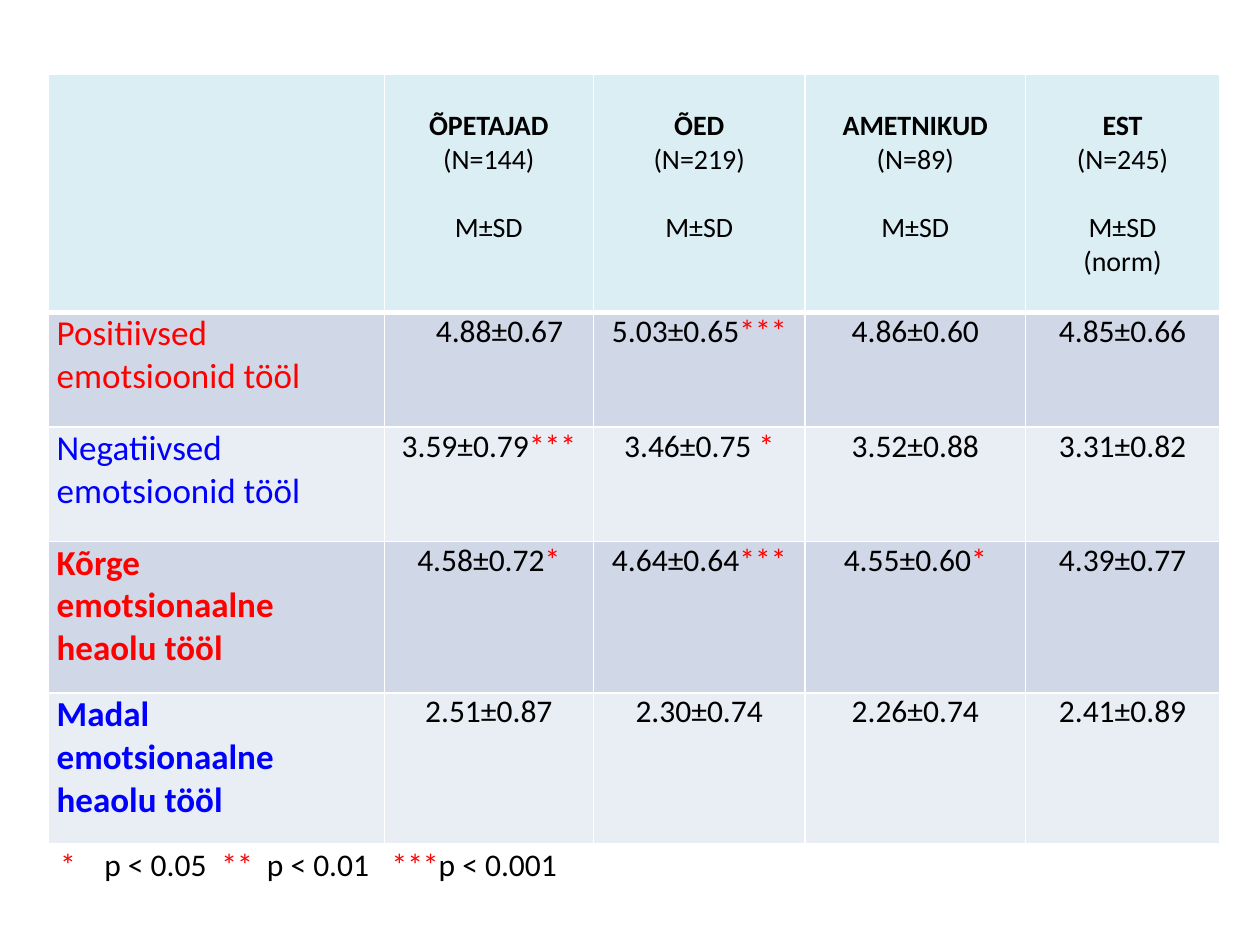
from lxml import etree
from pptx import Presentation
from pptx.dml.color import RGBColor
from pptx.enum import text
from pptx.oxml import ns
from pptx.util import Inches, Pt

RED, BLUE, BLACK, WHITE = "FF0000", "0000FF", "000000", "FFFFFF"
HEADER_FILL = "DBEEF4"
BAND_FILLS = ("D0D8E8", "E9EDF4")
COLUMN_WIDTHS = (2.67, 1.66, 1.68, 1.75, 1.54)
ROW_HEIGHTS = (1.89, 0.91, 0.91, 1.2, 1.2)
GROUPS = (
    ("ÕPETAJAD", "(N=144)", "M±SD"),
    ("ÕED", "(N=219)", "M±SD"),
    ("AMETNIKUD", "(N=89)", "M±SD"),
    ("EST", "(N=245)", "M±SD", "(norm)"),
)
# label lines, label colour, bold label, values by group
MEASURES = (
    (["Positiivsed emotsioonid tööl"], RED, False,
     ["4.88±0.67", "5.03±0.65***", "4.86±0.60", "4.85±0.66"]),
    (["Negatiivsed emotsioonid tööl"], BLUE, False,
     ["3.59±0.79***", "3.46±0.75 *", "3.52±0.88", "3.31±0.82"]),
    (["Kõrge", "emotsionaalne heaolu tööl"], RED, True,
     ["4.58±0.72*", "4.64±0.64***", "4.55±0.60*", "4.39±0.77"]),
    (["Madal", "emotsionaalne heaolu tööl"], BLUE, True,
     ["2.51±0.87", "2.30±0.74", "2.26±0.74", "2.41±0.89"]),
)


def rgb(color):
    return RGBColor.from_string(color)


def style(paragraph, size, color=BLACK, bold=False, centered=True):
    font = paragraph.font
    font.name, font.size, font.bold = "Calibri", Pt(size), bold
    font.color.rgb = rgb(color)
    paragraph.alignment = text.PP_ALIGN.CENTER if centered else text.PP_ALIGN.LEFT


def add_run(paragraph, words, color):
    run = paragraph.add_run()
    run.text = words
    run.font.color.rgb = rgb(color)


def write_lines(cell, lines):
    cell.text_frame.text = "\n".join(lines)
    return cell.text_frame.paragraphs


def write_value(cell, value):
    """Write mean and deviation in black, the significance stars in red."""
    paragraph = cell.text_frame.paragraphs[0]
    style(paragraph, 18)
    number = value.rstrip("*")
    add_run(paragraph, number, BLACK)
    if number != value:
        add_run(paragraph, value[len(number):], RED)


def add_border(cell, side, width):
    line = etree.SubElement(cell._tc.get_or_add_tcPr(), ns.qn(f"a:ln{side}"),
                            w=str(Pt(width)))
    fill = etree.SubElement(line, ns.qn("a:solidFill"))
    etree.SubElement(fill, ns.qn("a:srgbClr"), val=WHITE)


def format_cell(cell, row):
    cell.margin_left = cell.margin_right = Inches(0.07)
    cell.margin_top = cell.margin_bottom = 0
    add_border(cell, "L", 1)
    add_border(cell, "R", 1)
    if row == 0:
        add_border(cell, "T", 1)
    add_border(cell, "B", 3 if row == 0 else 1)
    cell.fill.solid()
    cell.fill.fore_color.rgb = rgb(BAND_FILLS[(row - 1) % 2] if row else HEADER_FILL)


def write_header(cell, lines):
    cell.margin_top = Inches(0.27)
    for index, paragraph in enumerate(write_lines(cell, lines)):
        style(paragraph, 16, bold=index == 0)
        if index == 2:
            paragraph.space_before = Pt(19.5)


def add_results(slide):
    frame = slide.shapes.add_table(
        len(ROW_HEIGHTS), len(COLUMN_WIDTHS), Inches(0.38), Inches(0.59),
        Inches(sum(COLUMN_WIDTHS)), Inches(sum(ROW_HEIGHTS)))
    table = frame.table
    table.first_row = table.horz_banding = False
    for column, width in zip(table.columns, COLUMN_WIDTHS):
        column.width = Inches(width)
    for row, height in enumerate(ROW_HEIGHTS):
        table.rows[row].height = Inches(height)
        for cell in table.rows[row].cells:
            format_cell(cell, row)
    for column, lines in enumerate(GROUPS, 1):
        write_header(table.cell(0, column), lines)
    for row, (label, color, bold, values) in enumerate(MEASURES, 1):
        for paragraph in write_lines(table.cell(row, 0), label):
            style(paragraph, 20, color, bold, centered=False)
        for column, value in enumerate(values, 1):
            write_value(table.cell(row, column), value)
    # The first value sits slightly right of its column's centre.
    table.cell(1, 1).margin_left = Inches(0.24)


def add_tab_stops(paragraph, positions):
    stops = etree.SubElement(paragraph._p.get_or_add_pPr(), ns.qn("a:tabLst"))
    for position in positions:
        etree.SubElement(stops, ns.qn("a:tab"), pos=str(Inches(position)), algn="l")


def add_legend(slide):
    box = slide.shapes.add_textbox(Inches(0.38), Inches(6.66), Inches(4.17), Inches(0.4))
    box.text_frame.word_wrap = True
    paragraph = box.text_frame.paragraphs[0]
    add_tab_stops(paragraph, (0.35, 1.28, 1.64, 2.63))
    style(paragraph, 18, centered=False)
    for stars, level in (("*\t", "p < 0.05\t"), ("**\t", "p < 0.01\t"),
                         ("***", "p < 0.001")):
        add_run(paragraph, stars, RED)
        add_run(paragraph, level, BLACK)


def main():
    deck = Presentation()
    deck.slide_width, deck.slide_height = Inches(10), Inches(7.5)
    slide = deck.slides.add_slide(deck.slide_layouts[6])
    add_results(slide)
    add_legend(slide)
    deck.save("out.pptx")


if __name__ == "__main__":
    main()
